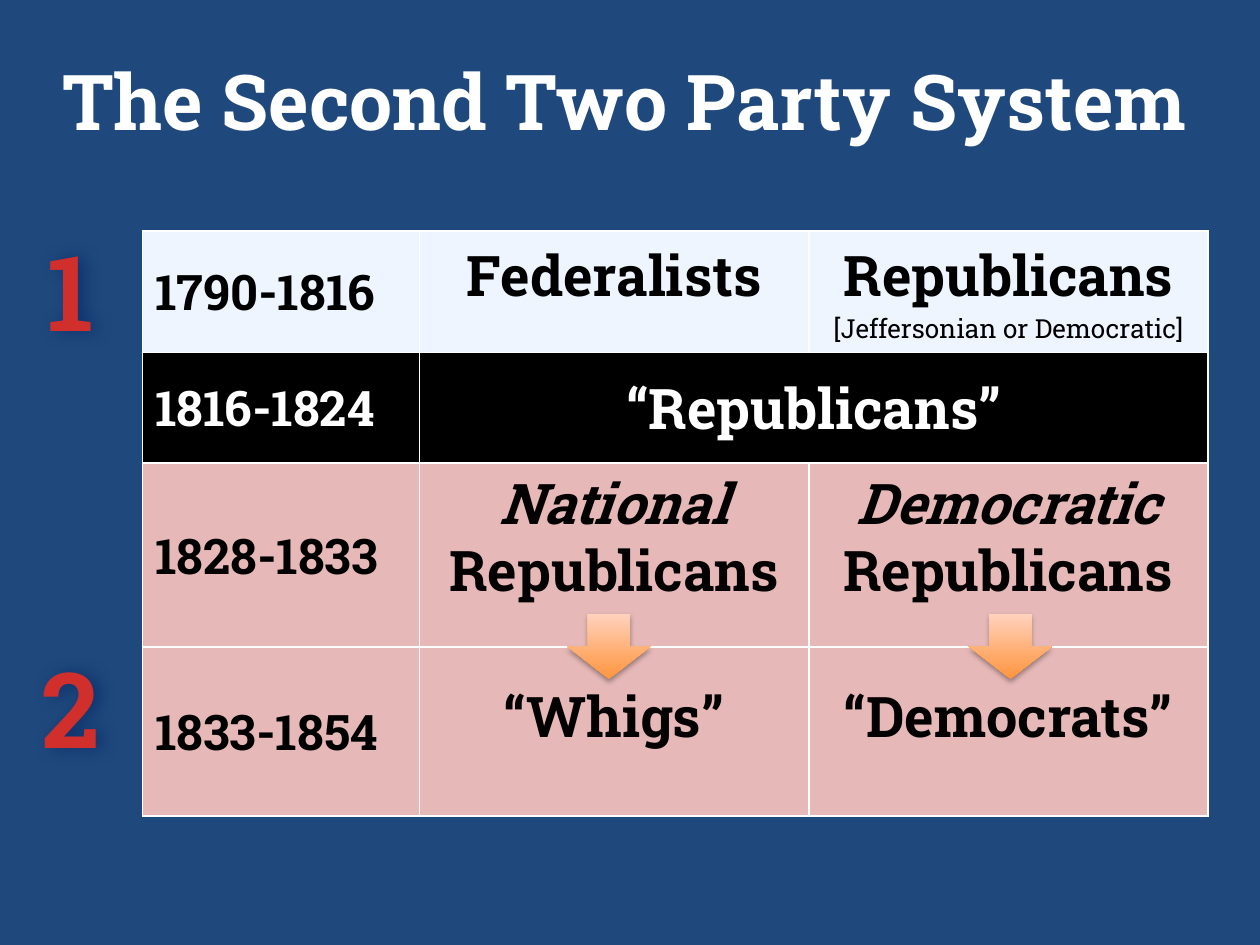
from lxml.etree import SubElement
from pptx import Presentation
from pptx.dml.color import RGBColor
from pptx.enum.shapes import MSO_SHAPE
from pptx.enum.text import MSO_ANCHOR, PP_ALIGN
from pptx.oxml import parse_xml
from pptx.oxml.ns import nsdecls, qn
from pptx.util import Pt

FONT = "Roboto Slab"
WHITE, BLACK, INK = "FFFFFF", "000000", "030102"
PALE, PINK, RED, NAVY = "EFF5FF", "E6B9B8", "D02F2C", "002060"


def color(value):
    return RGBColor.from_string(value)


def points(*lengths):
    return [Pt(length) for length in lengths]


def add_span(para, text, size, ink, **formats):
    span = para.add_run()
    span.text = text
    span.font.color.rgb = color(ink)
    values = {"name": FONT, "size": Pt(size), "bold": True, **formats}
    for name, value in values.items():
        setattr(span.font, name, value)


def add_shadow(shape, ink, opacity, blur, distance, angle):
    shape.shadow.inherit = False
    effects = shape._element.spPr.find(qn("a:effectLst"))
    outer = SubElement(effects, qn("a:outerShdw"), blurRad=str(Pt(blur)),
                       dist=str(Pt(distance)), dir=str(angle * 60000), rotWithShape="0")
    tint = SubElement(outer, qn("a:srgbClr"), val=ink)
    SubElement(tint, qn("a:alpha"), val=str(opacity * 1000))


def add_title(page, box, text):
    title = page.shapes.title
    for name, value in zip(("left", "top", "width", "height"), points(*box)):
        setattr(title, name, value)
    title.text_frame.vertical_anchor = MSO_ANCHOR.MIDDLE
    para = title.text_frame.paragraphs[0]
    para.alignment = PP_ALIGN.CENTER
    add_span(para, text, 44, WHITE)


def add_label(page, box, spans, size=32, ink=INK):
    """Centred text; spans are (text, italic) pairs."""
    label = page.shapes.add_textbox(*points(*box))
    label.text_frame.word_wrap = True
    para = label.text_frame.paragraphs[0]
    para.alignment = PP_ALIGN.CENTER
    for text, italic in spans:
        add_span(para, text, size, ink, italic=italic)
    return label


def format_cell(cell, fill):
    cell.fill.solid()
    cell.fill.fore_color.rgb = color(fill)
    properties = cell._tc.get_or_add_tcPr()
    for index, side in enumerate(("lnL", "lnR", "lnT", "lnB")):
        properties.insert(index, parse_xml(
            f'<a:{side} {nsdecls("a")} w="{Pt(1)}"><a:solidFill>'
            f'<a:srgbClr val="{WHITE}"/></a:solidFill></a:{side}>'))


def add_party_table(page, box, widths, heights):
    # Each row: years, fill, text colour, lines of the two party cells
    rows = [
        ("1790-1816", PALE, BLACK, [("Federalists",),
                                    ("Republicans", "[Jeffersonian or Democratic]")]),
        ("1816-1824", BLACK, WHITE, [("“Republicans”",)]),
        ("1828-1833", PINK, BLACK, []),
        ("1833-1854", PINK, BLACK, []),
    ]
    table = page.shapes.add_table(len(rows), len(widths), *points(*box)).table
    table.first_row = table.horz_banding = False
    for column, width in zip(table.columns, widths):
        column.width = Pt(width)
    for row, height, (years, fill, ink, parties) in zip(table.rows, heights, rows):
        row.height = Pt(height)
        for cell in row.cells:
            format_cell(cell, fill)
            cell.vertical_anchor = MSO_ANCHOR.MIDDLE
        add_span(row.cells[0].text_frame.paragraphs[0], years, 28, ink)
        for cell, lines in zip(list(row.cells)[1:], parties):
            for index, line in enumerate(lines):
                frame = cell.text_frame
                para = frame.add_paragraph() if index else frame.paragraphs[0]
                para.alignment = PP_ALIGN.CENTER
                add_span(para, line, 15 if index else 32, ink, bold=index == 0)
    table.cell(0, 1).vertical_anchor = MSO_ANCHOR.TOP
    table.cell(1, 1).merge(table.cell(1, 2))


def add_system_number(page, box, number):
    label = add_label(page, box, [(number, False)], 60, RED)
    add_shadow(label, NAVY, 60, 10, 3, 0)


def add_arrow(page, box):
    arrow = page.shapes.add_shape(MSO_SHAPE.DOWN_ARROW, *points(*box))
    arrow.line.fill.background()
    arrow.fill.gradient()
    arrow.fill.gradient_angle = 90
    for stop, tint in zip(arrow.fill.gradient_stops, ("FF953E", "FFD2BD")):
        stop.color.rgb = color(tint)
    add_shadow(arrow, BLACK, 35, 3.1, 1.8, 90)


def add_party_column(page, box, adjective, successor, arrow_left):
    left, top, width, height = box
    add_label(page, (left, top, width, 85), [(adjective, True), (" Republicans", False)])
    add_label(page, (left, top + 121.7, width, 46), [(successor, False)])
    add_arrow(page, (arrow_left, top + 86.4, 48, 37.4))


def build():
    deck = Presentation()
    deck.slide_width, deck.slide_height = points(720, 540)
    page = deck.slides.add_slide(deck.slide_layouts[5])
    page.background.fill.solid()
    page.background.fill.fore_color.rgb = color("1F497D")

    add_title(page, (12, 12, 690, 90), "The Second Two Party System")

    # Table of parties by period
    widths, heights = (158.4, 222.4, 228.2), (69, 63.4, 105, 96.5)
    add_party_table(page, (81.4, 132, sum(widths), sum(heights)), widths, heights)

    # Numbers of the two party systems
    for number, top in (("1", 126), ("2", 364.3)):
        add_system_number(page, (0, top, 81, 80), number)

    # Party names and what they became
    add_party_column(page, (240, 264.2, 222, 168), "National", "“Whigs”", 324)
    add_party_column(page, (462, 264.2, 228, 168), "Democratic", "“Democrats”", 553.4)

    deck.save("out.pptx")


if __name__ == "__main__":
    build()
